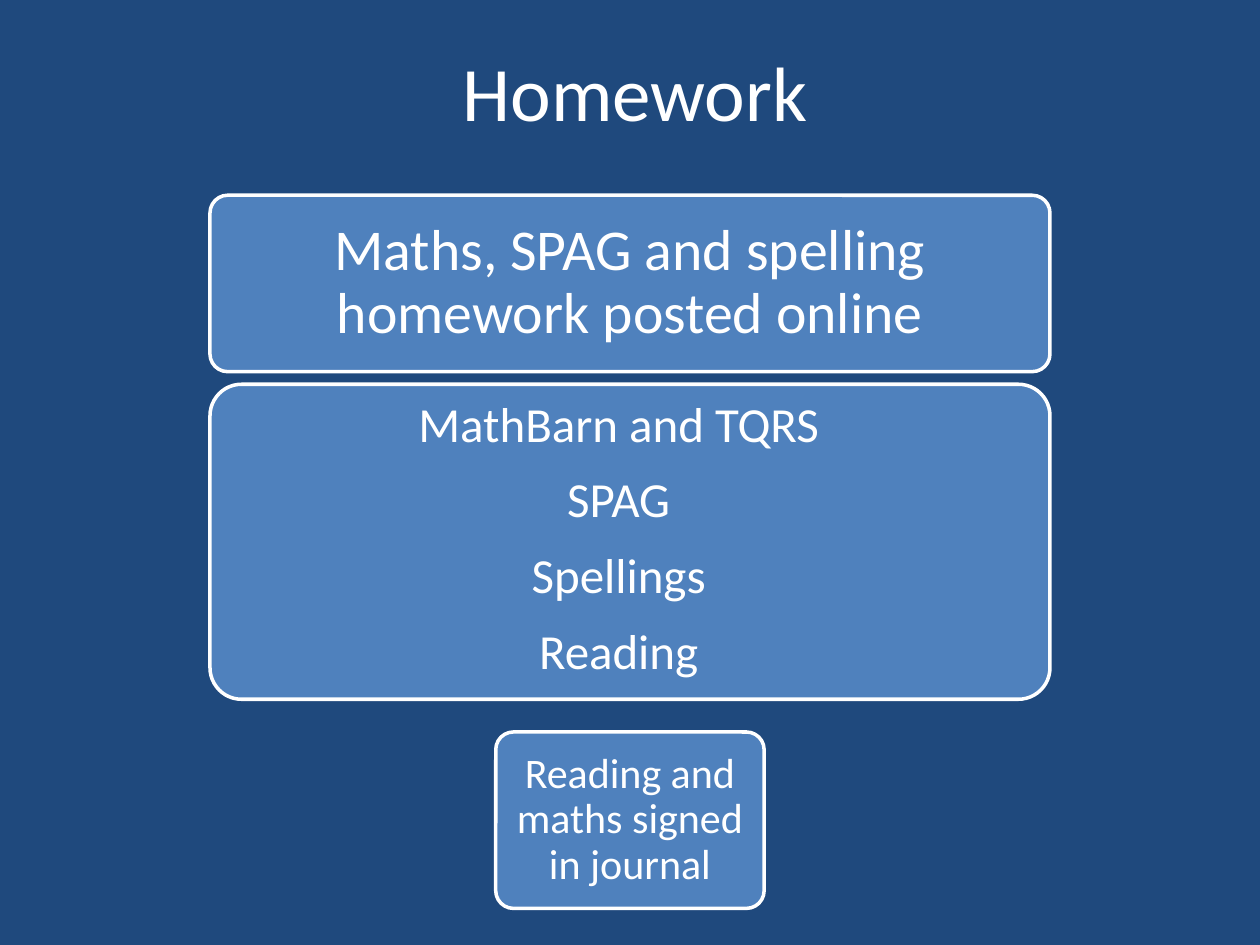
import dataclasses
import typing

import lxml.etree
import pptx
import pptx.dml.color
import pptx.enum.shapes
import pptx.enum.text
import pptx.oxml.ns
import pptx.util


@dataclasses.dataclass(frozen=True)
class Theme:
    font: str = "Calibri"
    back: str = "1F497D"
    panel: str = "4F81BD"
    light: str = "FFFFFF"
    title_size: int = 44
    lead_size: int = 33
    list_size: int = 28
    note_size: int = 24
    outline: int = 2


@dataclasses.dataclass(frozen=True)
class Area:
    top: float
    width: float
    height: float
    middle: float = 5

    def place(self, shape: typing.Any) -> None:
        sides = {"left": self.middle - self.width / 2, "top": self.top,
                 "width": self.width, "height": self.height}
        for name, value in sides.items():
            setattr(shape, name, pptx.util.Inches(value))


@dataclasses.dataclass(frozen=True)
class Panel:
    area: Area
    lines: tuple[str, ...] = ()
    size: int = 0
    before: int = 0
    inset: float = 0.1


THEME = Theme()
WIDTH, HEIGHT = 10, 7.5
WIDE = WIDTH * 2 / 3
TITLE_AREA = Area(0.3, 8.17, 0.85, 5.04)
LIST_AREA = Area(3.03, 4.72, 2.51, 4.91)
LIST_LINES = ("MathBarn and TQRS", "SPAG", "Spellings", "Reading")
PANELS = (
    Panel(Area(1.55, WIDE, 1.4),
          ("Maths, SPAG and spelling homework posted online",),
          THEME.lead_size, 13, 0.14),
    Panel(Area(3.05, WIDE, 2.5)),
    Panel(Area(5.81, 2.13, 1.4),
          ("Reading and maths signed in journal",), THEME.note_size, 10, 0.08),
)


def colour(code: str) -> pptx.dml.color.RGBColor:
    return pptx.dml.color.RGBColor.from_string(code)


def write(shape: typing.Any, lines: tuple[str, ...], size: int,
          before: int = 0, inset: float = 0.05, spacing: float = 0.9,
          anchor: typing.Any = pptx.enum.text.MSO_ANCHOR.MIDDLE) -> None:
    frame = shape.text_frame
    margin = pptx.util.Inches(inset)
    frame_format = {
        "word_wrap": True, "vertical_anchor": anchor,
        "auto_size": pptx.enum.text.MSO_AUTO_SIZE.NONE,
        "margin_left": margin, "margin_right": margin,
        "margin_top": pptx.util.Inches(0.05),
        "margin_bottom": pptx.util.Inches(0.05),
    }
    para_format = {
        "alignment": pptx.enum.text.PP_ALIGN.CENTER, "line_spacing": spacing,
        "space_before": pptx.util.Pt(before), "space_after": pptx.util.Pt(0),
    }
    span_format = {"name": THEME.font, "size": pptx.util.Pt(size)}
    for name, value in frame_format.items():
        setattr(frame, name, value)
    for index, line in enumerate(lines):
        para = frame.add_paragraph() if index else frame.paragraphs[0]
        for name, value in para_format.items():
            setattr(para, name, value)
        span = para.add_run()
        span.text = line
        for name, value in span_format.items():
            setattr(span.font, name, value)
        span.font.color.rgb = colour(THEME.light)


def draw_panel(page: typing.Any, panel: Panel) -> None:
    box = page.shapes.add_shape(
        pptx.enum.shapes.MSO_SHAPE.ROUNDED_RECTANGLE, 0, 0, 0, 0)
    panel.area.place(box)
    box.adjustments[0] = 0.1
    box.shadow.inherit = False
    box.fill.solid()
    box.fill.fore_color.rgb = colour(THEME.panel)
    box.line.color.rgb = colour(THEME.light)
    box.line.width = pptx.util.Pt(THEME.outline)
    write(box, panel.lines, panel.size, panel.before, panel.inset)


def draw_list(page: typing.Any, body: typing.Any) -> None:
    LIST_AREA.place(body)
    write(body, LIST_LINES, THEME.list_size, 13, 0.13)
    for para in body.text_frame.paragraphs:
        properties = para._p.get_or_add_pPr()
        for name in ("marL", "indent"):
            properties.set(name, "0")
        lxml.etree.SubElement(properties, pptx.oxml.ns.qn("a:buNone"))
    page.shapes.element.append(body.element)


def main() -> None:
    deck = pptx.Presentation()
    deck.slide_width = pptx.util.Inches(WIDTH)
    deck.slide_height = pptx.util.Inches(HEIGHT)
    page = deck.slides.add_slide(deck.slide_layouts[1])
    page.background.fill.solid()
    page.background.fill.fore_color.rgb = colour(THEME.back)
    title, body = page.placeholders
    TITLE_AREA.place(title)
    write(title, ("Homework",), THEME.title_size, spacing=1.0,
          anchor=pptx.enum.text.MSO_ANCHOR.TOP)
    for panel in PANELS:
        draw_panel(page, panel)
    draw_list(page, body)
    deck.save("out.pptx")


if __name__ == "__main__":
    main()
